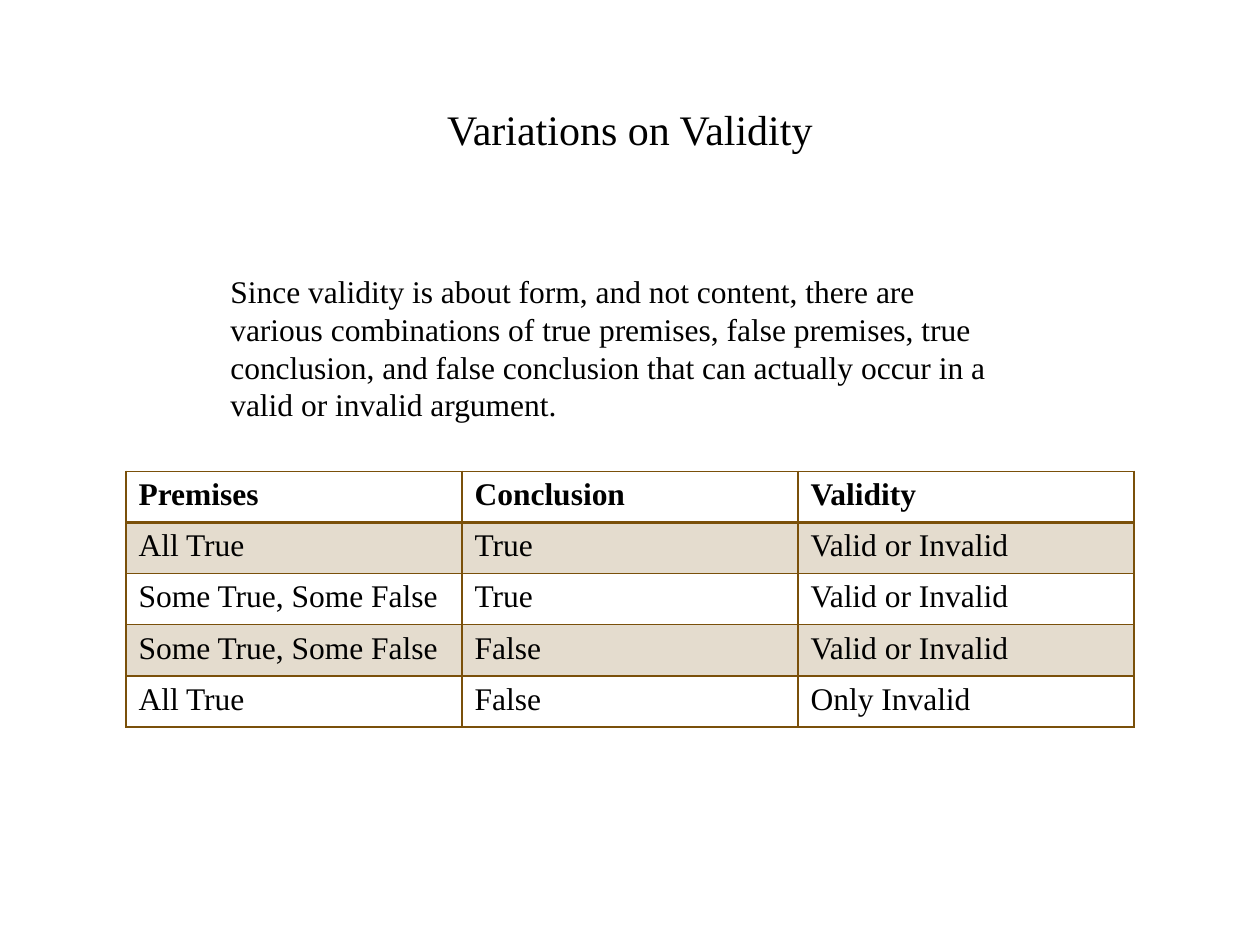
from lxml import etree
from pptx import Presentation
from pptx import util as u
from pptx.dml.color import RGBColor
from pptx.enum import text
from pptx.oxml.ns import qn

FONT, BLACK, BROWN = "Times New Roman", "000000", "7A500A"


def add_run(p, words, size, bold=False):
    r = p.add_run()
    r.text = words
    r.font.name, r.font.size, r.font.bold = FONT, u.Pt(size), bold
    r.font.color.rgb = RGBColor.from_string(BLACK)


def add_border(cell, side, position, width):
    """Draw one side (L, R, T or B) of a cell, placed in schema order."""
    ln = etree.Element(qn("a:ln" + side), w=str(u.Pt(width)))
    fill = etree.SubElement(ln, qn("a:solidFill"))
    etree.SubElement(fill, qn("a:srgbClr"), val=BROWN)
    cell._tc.get_or_add_tcPr().insert(position, ln)


prs = Presentation()
prs.slide_width, prs.slide_height = u.Inches(10), u.Inches(7.5)
s = prs.slides.add_slide(prs.slide_layouts[6])

# Title and introduction
intro = ("Since validity is about form, and not content, there are various "
         "combinations of true premises, false premises, true conclusion, and "
         "false conclusion that can actually occur in a valid or invalid argument.")
boxes = [
    ((1, 0.55, 8, 0.95), "Variations on Validity", 24,
     text.PP_ALIGN.CENTER, text.MSO_ANCHOR.MIDDLE),
    ((1.73, 2.11, 6.4, 1.31), intro, 18,
     text.PP_ALIGN.LEFT, text.MSO_ANCHOR.TOP),
]
for place, words, size, align, anchor in boxes:
    tf = s.shapes.add_textbox(*map(u.Inches, place)).text_frame
    tf.word_wrap, tf.vertical_anchor = True, anchor
    p = tf.paragraphs[0]
    p.alignment = align
    add_run(p, words, size)

# Table of combinations
rows = [
    ("Premises", "Conclusion", "Validity"),
    ("All True", "True", "Valid or Invalid"),
    ("Some True, Some False", "True", "Valid or Invalid"),
    ("Some True, Some False", "False", "Valid or Invalid"),
    ("All True", "False", "Only Invalid"),
]
table = s.shapes.add_table(len(rows), 3, prs.slide_width // 10, u.Inches(3.74),
                           prs.slide_width * 8 // 10, u.Inches(2.03)).table
table.horz_banding = table.first_row = False
for i, row in enumerate(rows):
    for j, words in enumerate(row):
        cell = table.cell(i, j)
        add_run(cell.text_frame.paragraphs[0], words, 18, bold=i == 0)
        if i % 2:
            cell.fill.solid()
            cell.fill.fore_color.rgb = RGBColor.from_string(BROWN)
            color = cell._tc.tcPr.find(".//" + qn("a:srgbClr"))
            etree.SubElement(color, qn("a:alpha"), val="20000")
        else:
            cell.fill.background()
        for position, side in enumerate("LRTB"):
            header_rule = (i, side) in ((0, "B"), (1, "T"))
            add_border(cell, side, position, 2 if header_rule else 1)

prs.save("out.pptx")
